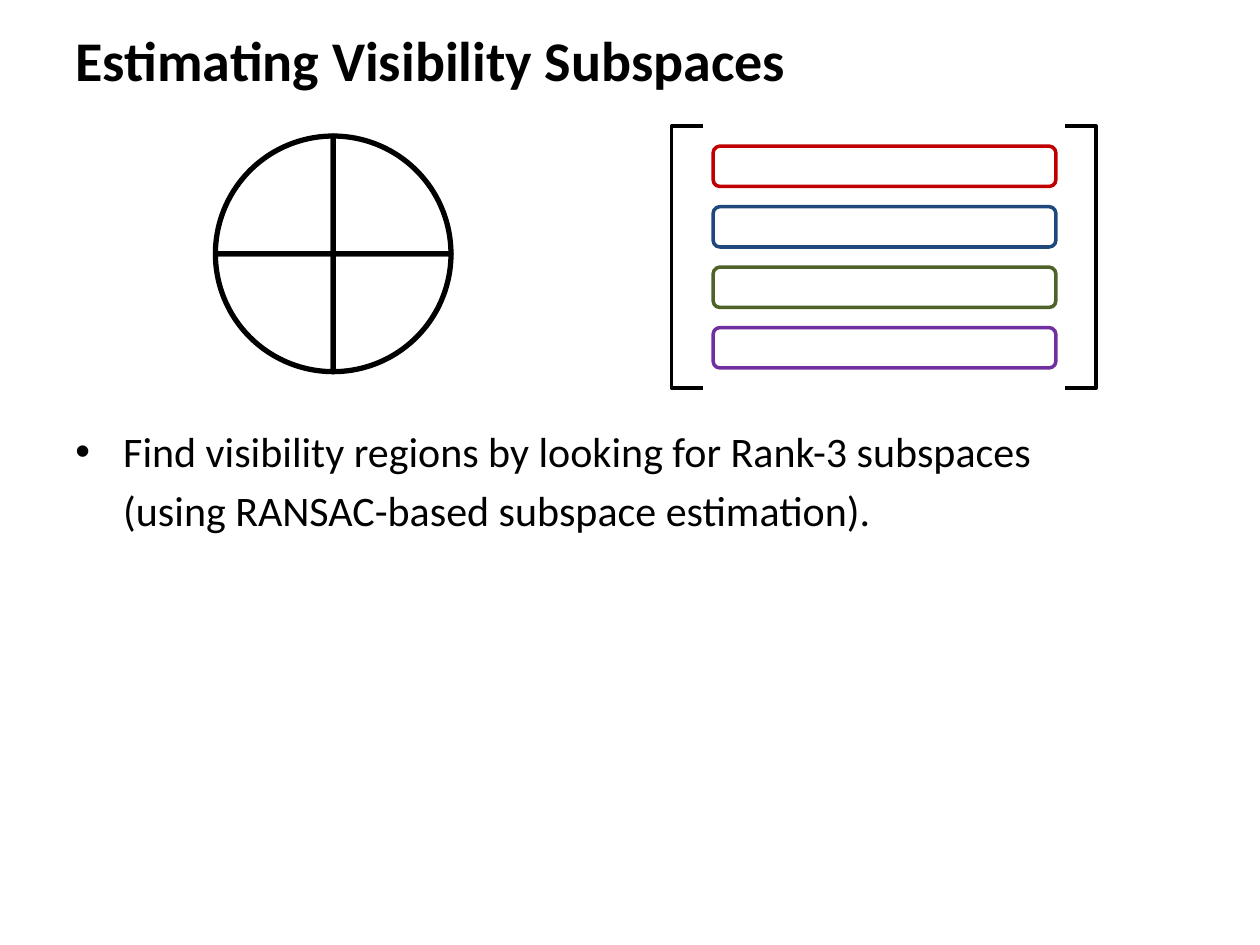
"""Build the slide on estimating visibility subspaces."""
from pptx import Presentation
from pptx.dml.color import RGBColor as RGB
from pptx.enum.shapes import MSO_SHAPE as SHAPE
from pptx.enum.text import MSO_ANCHOR as ANCHOR, PP_ALIGN as ALIGN
from pptx.oxml.ns import qn
from pptx.util import Inches, Pt
from lxml.etree import SubElement

BLACK = RGB(0, 0, 0)
RED = RGB(0xC0, 0, 0)
BLUE = RGB(0x1F, 0x49, 0x7D)
GREEN = RGB(0x4F, 0x62, 0x28)
PURPLE = RGB(0x70, 0x30, 0xA0)

TITLE = "Estimating Visibility Subspaces"
BODY = [
    ("Find visibility regions by looking for Rank-3 subspaces", "•"),
    ("(using RANSAC-based subspace estimation).", None),
]
ROWS = [RED, BLUE, GREEN, PURPLE]
PIE = (1.71, 1.08, 1.87, 1.87)
QUARTER = 54
ROW = (5.66, 1.16, 2.72, 0.32)
PITCH = 0.48
BRACKETS = [(5.33, 5.58), (8.7, 8.45)]
TOP, BASE = 1, 3.08
HANG = 0.38
FONTS = {
    "title": {"name": "Calibri", "size": Pt(32), "bold": True},
    "body": {"name": "Calibri", "size": Pt(24), "bold": False},
}


def style(para, kind):
    for key, value in FONTS[kind].items():
        setattr(para.font, key, value)
    para.font.color.rgb = BLACK


def place(shape, box):
    for key, value in zip(("left", "top", "width", "height"), box):
        setattr(shape, key, Inches(value))


def outline(shape, color, width):
    shape.shadow.inherit = False
    shape.fill.background()
    shape.line.color.rgb = color
    shape.line.width = Pt(width)


def add_title(slide):
    title = slide.shapes.title
    place(title, (0.5, 0.08, 9, 0.78))
    frame = title.text_frame
    frame.text = TITLE
    frame.vertical_anchor = ANCHOR.MIDDLE
    para = frame.paragraphs[0]
    para.alignment = ALIGN.LEFT
    style(para, "title")


def add_body(slide):
    box = slide.shapes.add_textbox(*map(Inches, (0.5, 3.33, 9, 1.08)))
    frame = box.text_frame
    frame.word_wrap = True
    for i, (text, mark) in enumerate(BODY):
        para = frame.add_paragraph() if i else frame.paragraphs[0]
        para.text = text
        if i:
            para.space_before = Pt(4.8)
        props = para._p.get_or_add_pPr()
        props.set("marL", str(Inches(HANG)))
        props.set("indent", str(Inches(-HANG) if mark else 0))
        if mark:
            SubElement(props, qn("a:buFont")).set("typeface", "Arial")
            SubElement(props, qn("a:buChar")).set("char", mark)
        style(para, "body")


def add_pie(slide):
    for i in range(4):
        part = slide.shapes.add_shape(SHAPE.PIE, *map(Inches, PIE))
        part.adjustments[0] = i * QUARTER
        part.adjustments[1] = (i + 1) % 4 * QUARTER
        outline(part, BLACK, 3)


def add_matrix(slide):
    shapes = slide.shapes.add_group_shape().shapes
    for edge, tip in BRACKETS:
        points = [(tip, TOP), (edge, TOP), (edge, BASE), (tip, BASE)]
        start, *rest = [tuple(map(Inches, p)) for p in points]
        path = shapes.build_freeform(*start)
        path.add_line_segments(rest, close=False)
        outline(path.convert_to_shape(), BLACK, 2)
    left, top, width, height = ROW
    for i, color in enumerate(ROWS):
        box = (left, top + i * PITCH, width, height)
        row = shapes.add_shape(SHAPE.ROUNDED_RECTANGLE, *map(Inches, box))
        outline(row, color, 2)


def main():
    deck = Presentation()
    deck.slide_width, deck.slide_height = Inches(10), Inches(7.5)
    slide = deck.slides.add_slide(deck.slide_layouts[5])
    add_title(slide)
    add_body(slide)
    add_pie(slide)
    add_matrix(slide)
    deck.save("out.pptx")


if __name__ == "__main__":
    main()
